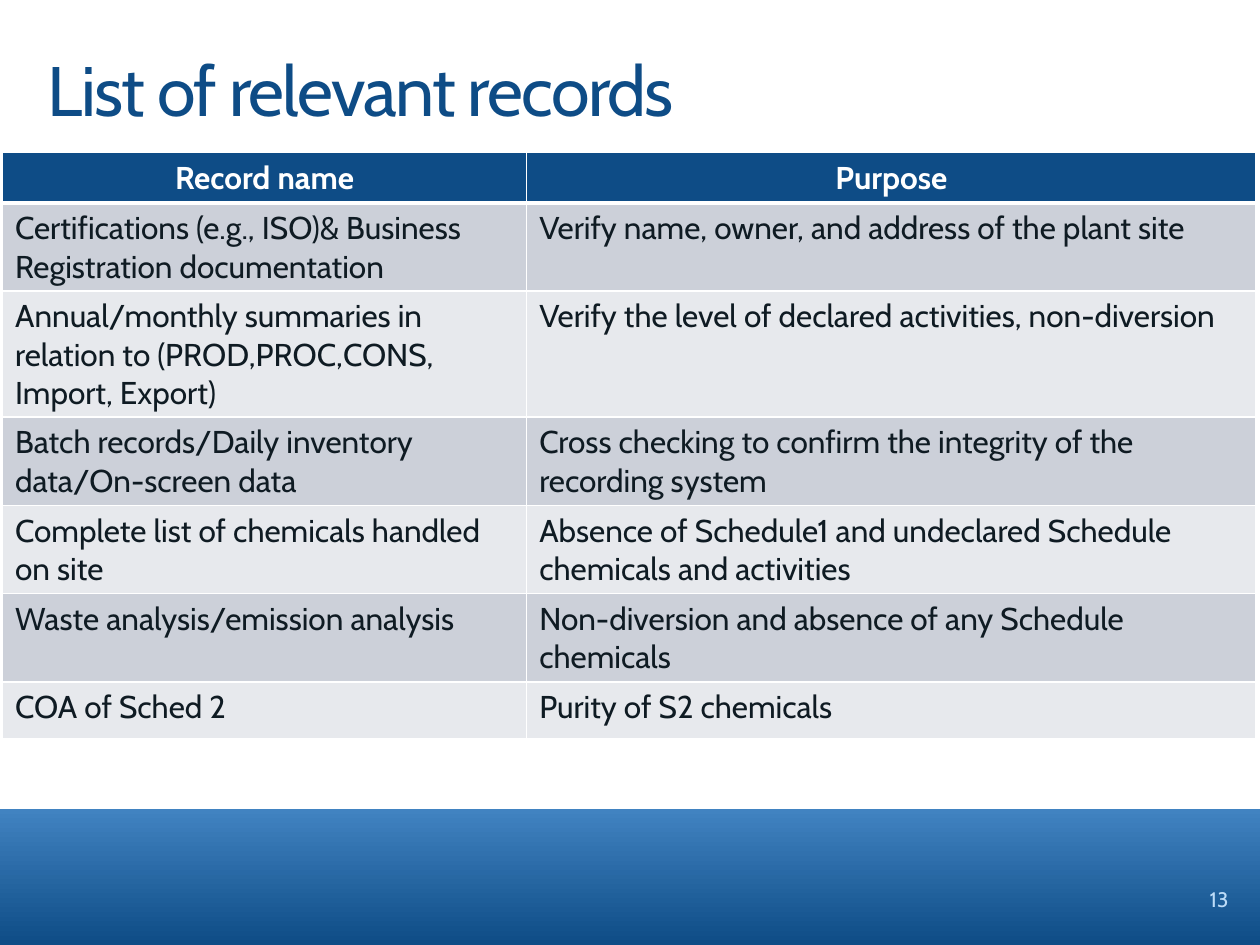
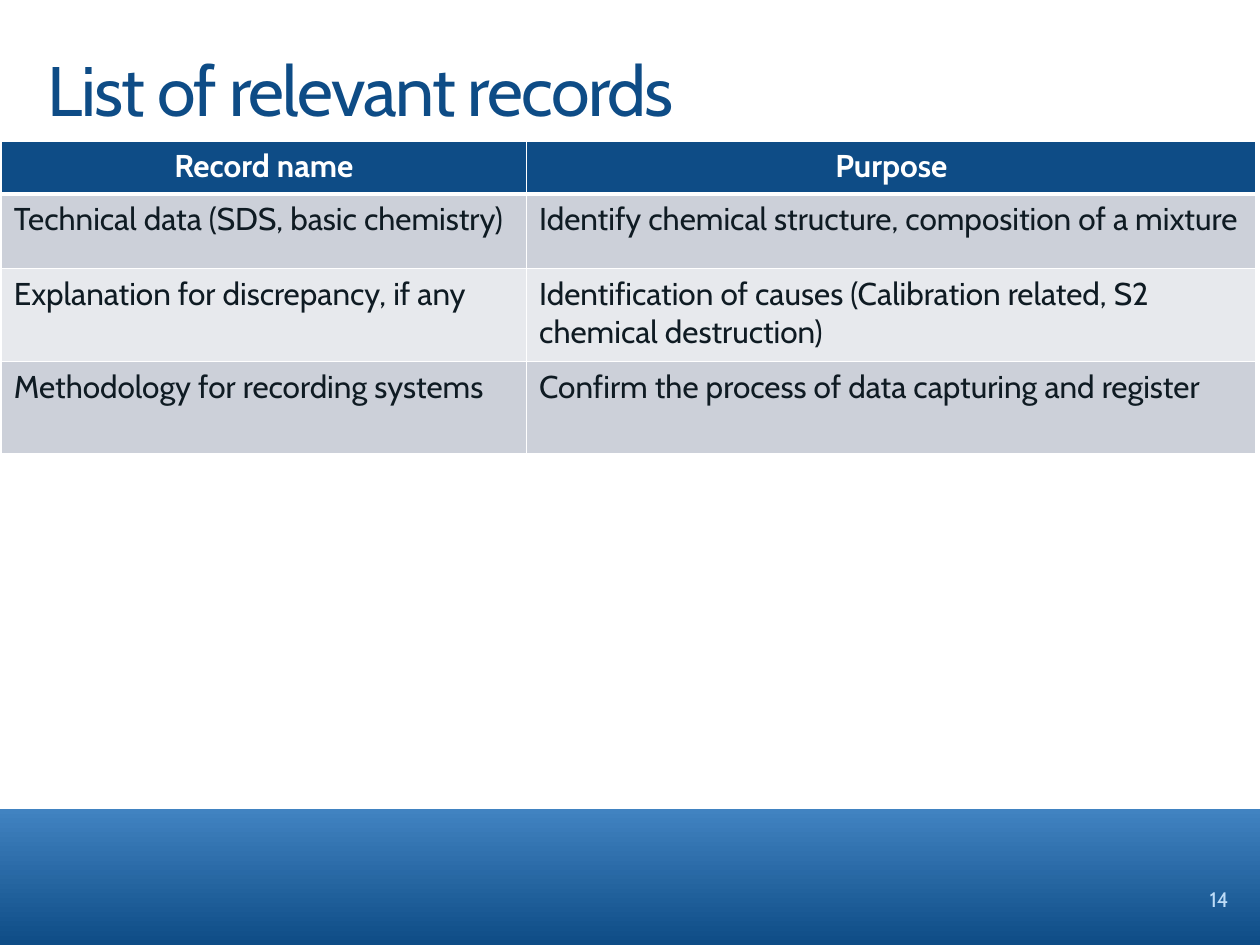
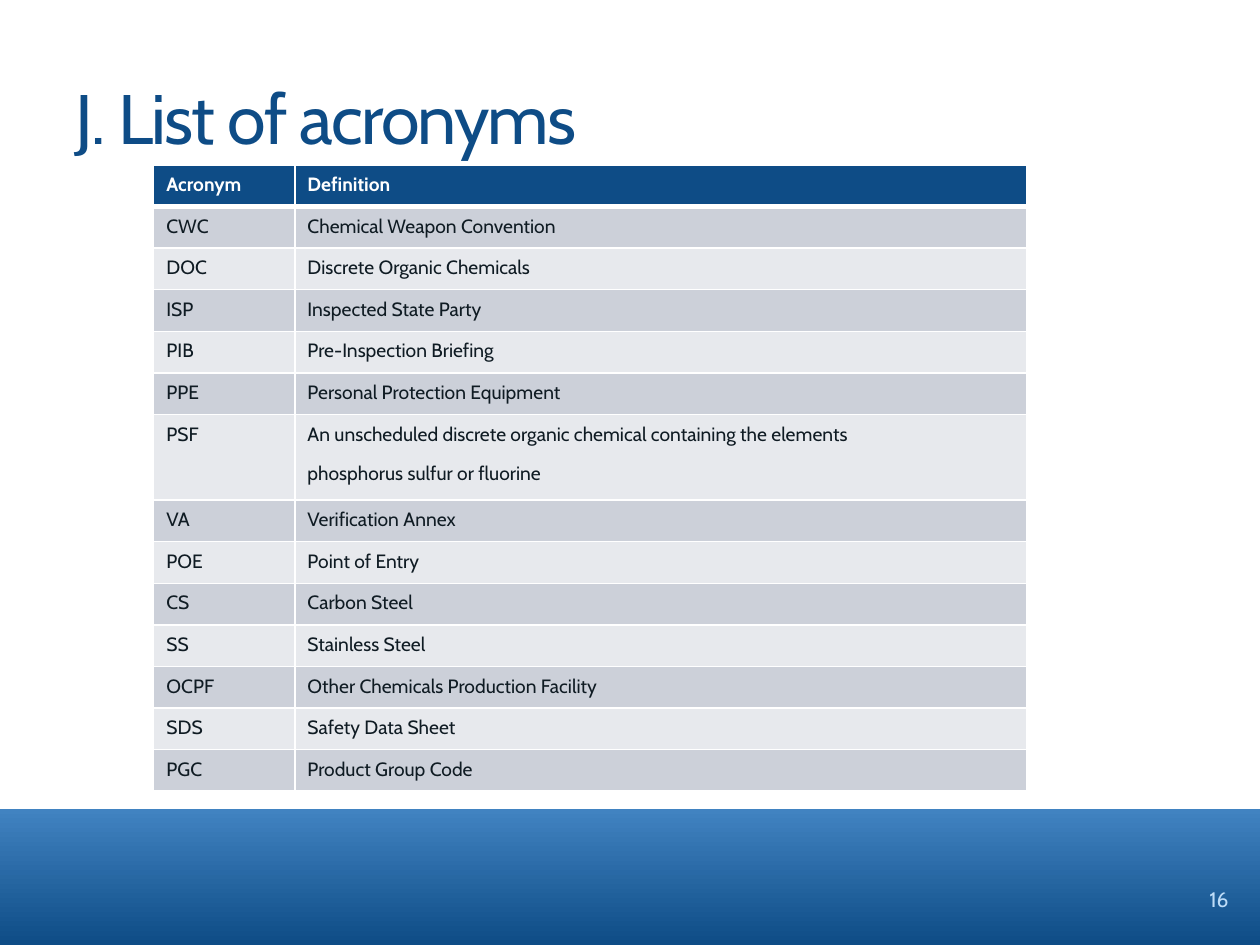
from lxml import etree
from pptx import Presentation
from pptx.dml.color import RGBColor
from pptx.enum.shapes import MSO_SHAPE
from pptx.enum.text import MSO_ANCHOR, MSO_AUTO_SIZE, PP_ALIGN
from pptx.oxml.ns import qn
from pptx.util import Inches, Pt

FONT = "Cabin"
COLORS = {
    "navy": "0E4C86",
    "sky": "4183C1",
    "pale": "BDDCF8",
    "ink": "0F1B23",
    "white": "FFFFFF",
    "row_dark": "CCD0D9",
    "row_light": "E7E9ED",
}


def write(frame, text, size, color, bold=False, align=PP_ALIGN.LEFT,
          line_spacing=None, space_after=None, tracking=None):
    """Fill a text frame, one paragraph for each line of the text."""
    for index, line in enumerate(text.split("\n")):
        para = frame.paragraphs[0] if index == 0 else frame.add_paragraph()
        para.alignment = align
        if line_spacing:
            para.line_spacing = line_spacing
        if space_after:
            para.space_after = Pt(space_after)
        span = para.add_run()
        span.text = line
        span.font.name = FONT
        span.font.size = Pt(size)
        span.font.bold = bold
        span.font.color.rgb = RGBColor.from_string(COLORS[color])
        if tracking:
            span.font._element.set("spc", str(tracking * 100))


def add_borders(cell, top, bottom):
    """Draw white cell borders; top and bottom widths are in points."""
    properties = cell._tc.get_or_add_tcPr()
    for side, width in (("L", 1), ("R", 1), ("T", top), ("B", bottom)):
        line = etree.SubElement(properties, qn(f"a:ln{side}"), w=str(Pt(width)))
        fill = etree.SubElement(line, qn("a:solidFill"))
        etree.SubElement(fill, qn("a:srgbClr"), val=COLORS["white"])


# Formats of the two kinds of table
RECORDS_HEADER = {"size": 18, "align": PP_ALIGN.CENTER}
RECORDS_BODY = {"size": 18}
ACRONYMS = {"size": 11, "line_spacing": 1.07, "space_after": 8}

# Content of the slides; table is left, top, width, height
pages = [
    {
        "number": "13",
        "title": "List of relevant records",
        "title_at": (0.28, 0.08, 9.51, 1.25),
        "table_at": (0.02, 1.21, 9.95, 4.65),
        "columns": (4.16, 5.79),
        "heights": (0.37, 0.62, 0.88, 0.62, 0.62, 0.62, 0.45),
        "header": RECORDS_HEADER,
        "body": RECORDS_BODY,
        "rows": [
            ("Record name", "Purpose"),
            ("Certifications (e.g., ISO)& Business Registration documentation",
             "Verify name, owner, and address of the plant site"),
            ("Annual/monthly summaries in relation to (PROD,PROC,CONS, Import, Export)",
             "Verify the level of declared activities, non-diversion"),
            ("Batch records/Daily inventory data/On-screen data",
             "Cross checking to confirm the integrity of the recording system"),
            ("Complete list of chemicals handled on site",
             "Absence of Schedule1 and undeclared Schedule chemicals and activities"),
            ("Waste analysis/emission analysis",
             "Non-diversion and absence of any Schedule chemicals"),
            ("COA of Sched 2", "Purity of S2 chemicals"),
        ],
    },
    {
        "number": "14",
        "title": "List of relevant records",
        "title_at": (0.28, 0.08, 9.51, 1.25),
        "table_at": (0.01, 1.12, 9.96, 2.48),
        "columns": (4.17, 5.79),
        "heights": (0.42, 0.59, 0.74, 0.73),
        "header": RECORDS_HEADER,
        "body": RECORDS_BODY,
        "rows": [
            ("Record name", "Purpose"),
            ("Technical data (SDS, basic chemistry)",
             "Identify chemical structure, composition of a mixture"),
            ("Explanation for discrepancy, if any",
             "Identification of causes (Calibration related, S2 chemical destruction)"),
            ("Methodology for recording systems",
             "Confirm the process of data capturing and register"),
        ],
    },
    {
        "number": "16",
        "title": "J. List of acronyms",
        "title_at": (0.5, 0.3, 8.91, 1.25),
        "table_at": (1.22, 1.31, 6.93, 4.96),
        "columns": (1.12, 5.81),
        "heights": [0.33] * 6 + [0.68] + [0.33] * 7,
        "header": ACRONYMS,
        "body": ACRONYMS,
        "rows": [
            ("Acronym", "Definition"),
            ("CWC", "Chemical Weapon Convention"),
            ("DOC", "Discrete Organic Chemicals"),
            ("ISP", "Inspected State Party"),
            ("PIB", "Pre-Inspection Briefing"),
            ("PPE", "Personal Protection Equipment"),
            ("PSF", "An unscheduled discrete organic chemical containing the elements\n"
                    "phosphorus sulfur or fluorine"),
            ("VA", "Verification Annex"),
            ("POE", "Point of Entry"),
            ("CS", "Carbon Steel"),
            ("SS", "Stainless Steel"),
            ("OCPF", "Other Chemicals Production Facility"),
            ("SDS", "Safety Data Sheet"),
            ("PGC", "Product Group Code"),
        ],
    },
]

deck = Presentation()
deck.slide_width = Inches(10)
deck.slide_height = Inches(7.5)
title_only = deck.slide_layouts[5]

for content in pages:
    page = deck.slides.add_slide(title_only)

    # Footer band
    band = page.shapes.add_shape(
        MSO_SHAPE.RECTANGLE, Inches(0), Inches(6.42), Inches(10), Inches(1.08))
    band.shadow.inherit = False
    band.line.fill.background()
    band.fill.gradient()
    band.fill.gradient_angle = 270
    for stop, position, color in zip(band.fill.gradient_stops, (0, 1), ("sky", "navy")):
        stop.position = position
        stop.color.rgb = RGBColor.from_string(COLORS[color])

    # Page number
    number_box = page.shapes.add_textbox(
        Inches(9.02), Inches(6.96), Inches(0.83), Inches(0.35))
    number_box.text_frame.word_wrap = True
    number_box.text_frame.vertical_anchor = MSO_ANCHOR.MIDDLE
    write(number_box.text_frame, content["number"], size=12, color="pale",
          align=PP_ALIGN.RIGHT)

    # Title
    title = page.shapes.title
    title.left, title.top, title.width, title.height = map(Inches, content["title_at"])
    title.text_frame.auto_size = MSO_AUTO_SIZE.NONE
    title.text_frame.vertical_anchor = MSO_ANCHOR.MIDDLE
    write(title.text_frame, content["title"], size=40, color="navy", tracking=-1)

    # Table
    rows = content["rows"]
    table_frame = page.shapes.add_table(
        len(rows), len(content["columns"]), *map(Inches, content["table_at"]))
    table = table_frame.table
    for column, width in zip(table.columns, content["columns"]):
        column.width = Inches(width)
    for row, height in zip(table.rows, content["heights"]):
        row.height = Inches(height)
    table_frame.height = Inches(content["table_at"][3])

    for row_index, texts in enumerate(rows):
        is_header = row_index == 0
        if is_header:
            fill_color, text_color, style = "navy", "white", content["header"]
        else:
            fill_color = "row_dark" if row_index % 2 else "row_light"
            text_color, style = "ink", content["body"]
        for column_index, text in enumerate(texts):
            cell = table.cell(row_index, column_index)
            add_borders(cell, top=3 if row_index == 1 else 1, bottom=3 if is_header else 1)
            cell.fill.solid()
            cell.fill.fore_color.rgb = RGBColor.from_string(COLORS[fill_color])
            write(cell.text_frame, text, color=text_color, bold=is_header, **style)

deck.save("out.pptx")
